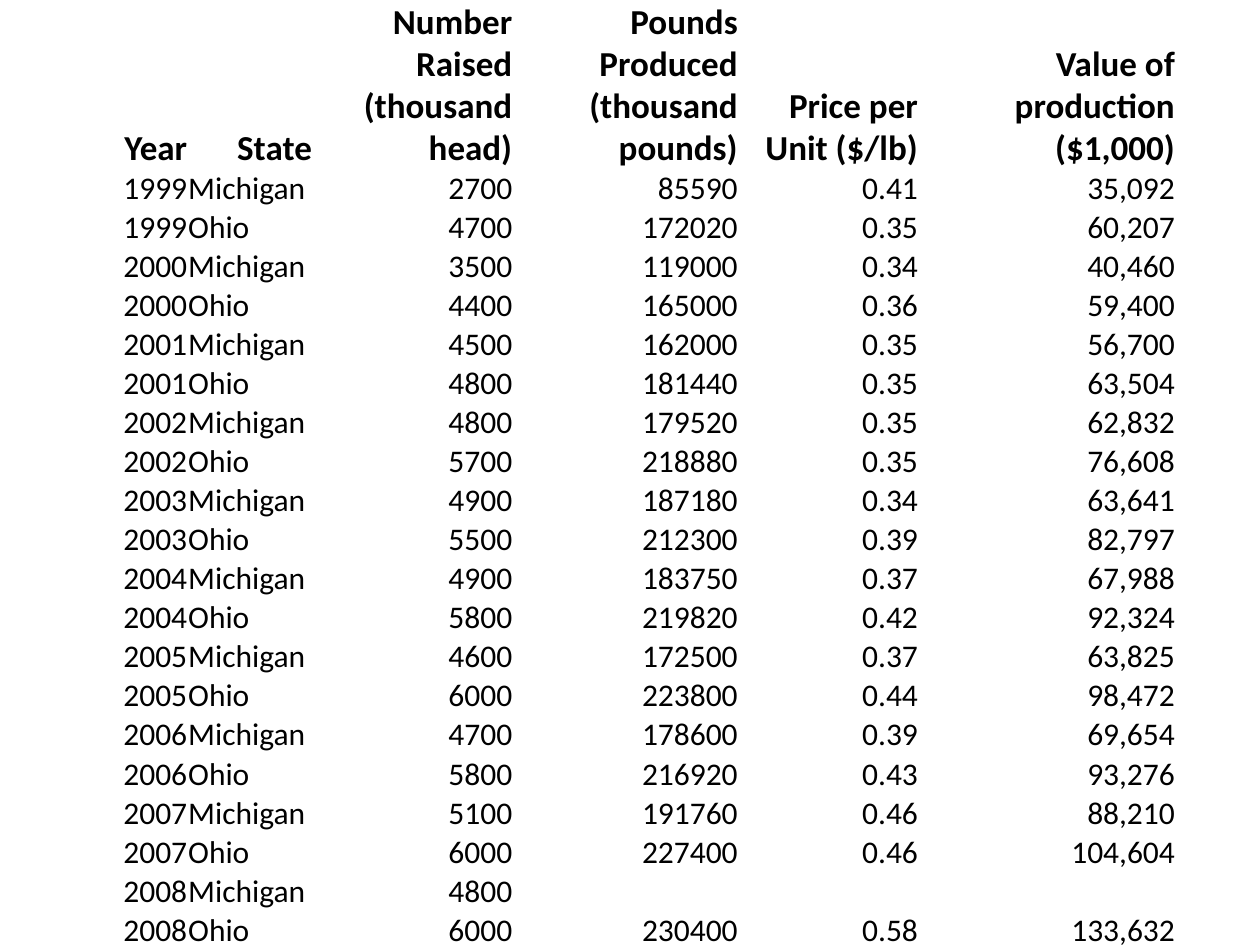
from pptx import Presentation
from pptx.dml.color import RGBColor
from pptx.enum.text import MSO_ANCHOR, PP_ALIGN
from pptx.util import Inches, Pt

# Content
HEADERS = ["Year", "State", "Number Raised (thousand head)",
           "Pounds Produced (thousand pounds)", "Price per Unit ($/lb)",
           "Value of production ($1,000)"]
FIRST_YEAR = 1999
STATES = ["Michigan", "Ohio"]
# Head, pounds, price and value; the states alternate within each year
FIGURES = [
    ("2700", "85590", "0.41", "35,092"),
    ("4700", "172020", "0.35", "60,207"),
    ("3500", "119000", "0.34", "40,460"),
    ("4400", "165000", "0.36", "59,400"),
    ("4500", "162000", "0.35", "56,700"),
    ("4800", "181440", "0.35", "63,504"),
    ("4800", "179520", "0.35", "62,832"),
    ("5700", "218880", "0.35", "76,608"),
    ("4900", "187180", "0.34", "63,641"),
    ("5500", "212300", "0.39", "82,797"),
    ("4900", "183750", "0.37", "67,988"),
    ("5800", "219820", "0.42", "92,324"),
    ("4600", "172500", "0.37", "63,825"),
    ("6000", "223800", "0.44", "98,472"),
    ("4700", "178600", "0.39", "69,654"),
    ("5800", "216920", "0.43", "93,276"),
    ("5100", "191760", "0.46", "88,210"),
    ("6000", "227400", "0.46", "104,604"),
    ("4800", "", "", ""),
    ("6000", "230400", "0.58", "133,632"),
]

# Layout in inches, inset in points
LEFT, TOP = 0.5, 0
COLUMN_WIDTHS = [0.99, 0.99, 1.59, 1.79, 1.43, 2.04]
HEADER_HEIGHT, ROW_HEIGHT = 1.34, 0.31
INSET = 0.3
HEADER_SPACING = 0.98
STATE_COLUMN = 1


def color(value):
    return RGBColor.from_string(value)


def fill_cell(cell, text, header, align):
    cell.fill.background()
    cell.vertical_anchor = MSO_ANCHOR.BOTTOM
    cell.margin_left = cell.margin_right = cell.margin_top = Pt(INSET)
    cell.margin_bottom = 0
    if not text:
        return
    cell.text_frame.text = text
    para = cell.text_frame.paragraphs[0]
    para.alignment = align
    if header:
        para.line_spacing = HEADER_SPACING
    font = para.runs[0].font
    font.name, font.size, font.bold = "Calibri", Pt(20 if header else 18), header
    font.color.rgb = color("000000")


def main():
    deck = Presentation()
    deck.slide_width, deck.slide_height = Inches(10), Inches(7.5)
    page = deck.slides.add_slide(deck.slide_layouts[6])

    rows = [HEADERS]
    for index, figures in enumerate(FIGURES):
        year, state = divmod(index, len(STATES))
        rows.append([str(FIRST_YEAR + year), STATES[state], *figures])

    # Production table
    heights = [HEADER_HEIGHT] + [ROW_HEIGHT] * len(FIGURES)
    table = page.shapes.add_table(
        len(rows), len(HEADERS), Inches(LEFT), Inches(TOP),
        Inches(sum(COLUMN_WIDTHS)), Inches(sum(heights))).table
    table.first_row = table.horz_banding = False
    for column, width in zip(table.columns, COLUMN_WIDTHS):
        column.width = Inches(width)
    for row, height in zip(table.rows, heights):
        row.height = Inches(height)

    # Headers are bold and larger; only the state names align left
    for r, values in enumerate(rows):
        header = r == 0
        for c, text in enumerate(values):
            left = c == STATE_COLUMN and not header
            fill_cell(table.cell(r, c), text, header,
                      PP_ALIGN.LEFT if left else PP_ALIGN.RIGHT)

    deck.save("out.pptx")


if __name__ == "__main__":
    main()
